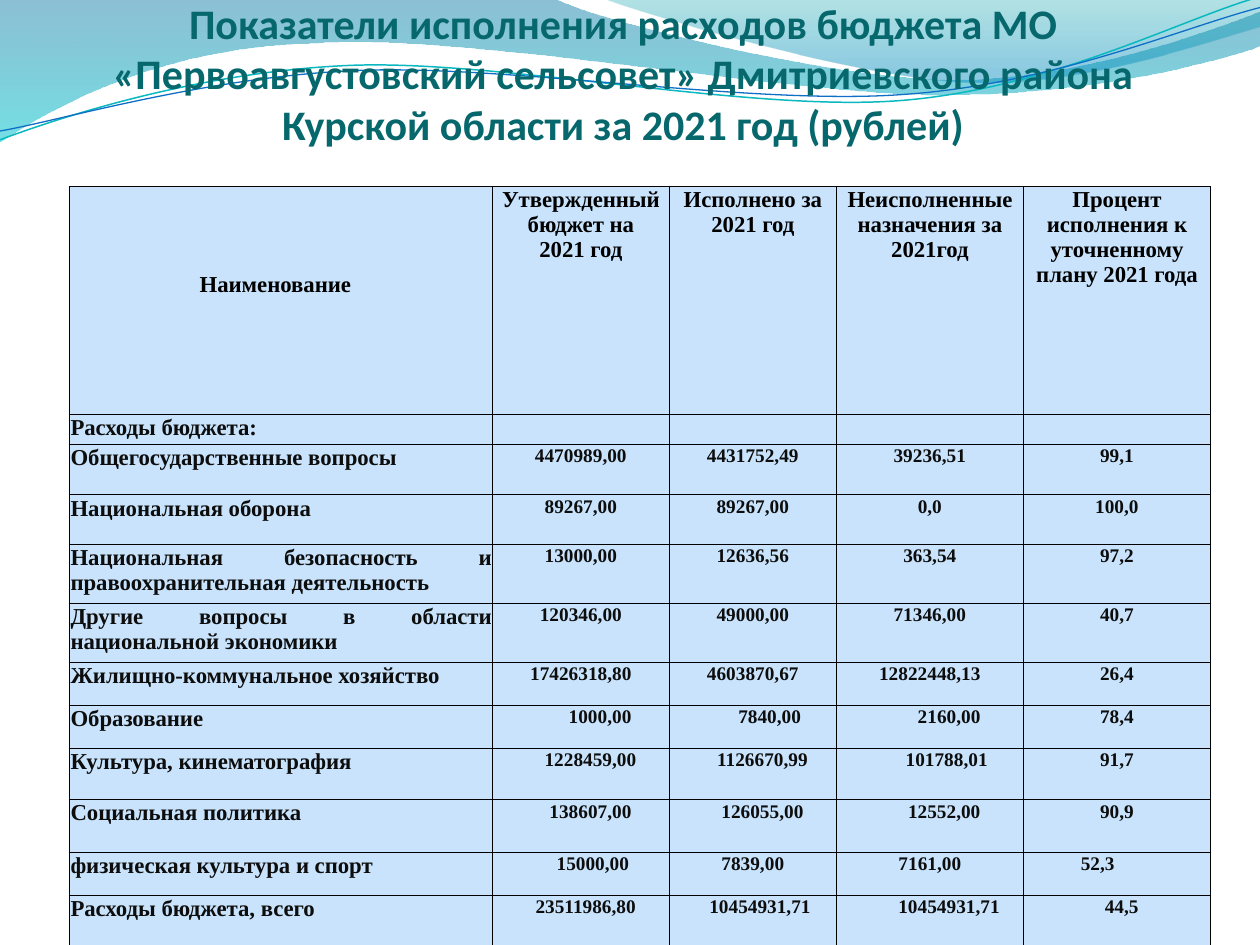
from lxml.etree import SubElement
from pptx import Presentation
from pptx.dml.color import RGBColor
from pptx.enum.text import MSO_ANCHOR, PP_ALIGN
from pptx.oxml.ns import qn
from pptx.util import Inches, Pt

TEAL = RGBColor(0x06, 0x68, 0x6C)
BLACK = RGBColor(0, 0, 0)
INK = RGBColor(0x0D, 0x0D, 0x0D)
PALE = RGBColor(0xC8, 0xE3, 0xFB)
AQUA = RGBColor(0x0A, 0xB8, 0xBF)
BLUE = RGBColor(0x0F, 0x6F, 0xC6)

TITLE = ("Показатели исполнения расходов бюджета МО «Первоавгустовский сельсовет» "
         "Дмитриевского района Курской области за 2021 год (рублей)")
NAME = "Наименование"
HEADS = ["Утвержденный бюджет на\n2021 год", "Исполнено за 2021 год",
         "Неисполненные назначения за 2021год",
         "Процент исполнения к уточненному плану 2021 года"]
# label, values, shift of each value in spaces (right is positive)
BODY = [
    ("Расходы бюджета:", ("", "", "", ""), (0, 0, 0, 0)),
    ("Общегосударственные вопросы", ("4470989,00", "4431752,49", "39236,51", "99,1"), (0, 0, 0, 0)),
    ("Национальная оборона", ("89267,00", "89267,00", "0,0", "100,0"), (0, 0, 0, 0)),
    ("Национальная безопасность и правоохранительная деятельность",
     ("13000,00", "12636,56", "363,54", "97,2"), (0, 0, 0, 0)),
    ("Другие вопросы в области национальной экономики",
     ("120346,00", "49000,00", "71346,00", "40,7"), (0, 0, 0, 0)),
    ("Жилищно-коммунальное хозяйство",
     ("17426318,80", "4603870,67", "12822448,13", "26,4"), (0, 0, 0, 0)),
    ("Образование", ("1000,00", "7840,00", "2160,00", "78,4"), (8, 7, 8, 0)),
    ("Культура, кинематография",
     ("1228459,00", "1126670,99", "101788,01", "91,7"), (4, 4, 7, 0)),
    ("Социальная политика", ("138607,00", "126055,00", "12552,00", "90,9"), (4, 4, 6, 0)),
    ("физическая культура и спорт", ("15000,00", "7839,00", "7161,00", "52,3"), (5, 0, 0, -8)),
    ("Расходы бюджета, всего",
     ("23511986,80", "10454931,71", "10454931,71", "44,5"), (2, 3, 8, 2)),
]
COLS = [3.36, 1.4, 1.33, 1.48, 1.49]
TOPS = [0.46, 0.21, 0.26, 0.45]
ROWS = TOPS + [0.24, 0.4, 0.39, 0.47, 0.47, 0.34, 0.34, 0.41, 0.42, 0.34, 0.44]

# Each step is an end point (2 numbers) or a curve (6 numbers)
WAVES = [
    ([(0, 0), (4.4, -0.01), (4.76, 0.17, 6.64, 0.63, 7.58, 0.63),
      (8.53, 0.63, 9.58, 0.26, 10, 0.09), (10.01, 0.36),
      (9.83, 0.44, 8.7, 0.76, 7.46, 0.75), (6.22, 0.75, 3.82, 0.28, 2.57, 0.34),
      (1.29, 0.36, 0.46, 0.83, -0.01, 1.13), (0, 0)],
     [(0, RGBColor(0, 0x74, 0xA1), 45), (1, RGBColor(0, 0xC6, 0xCF), 55)]),
    ([(4.79, -0.01), (5.09, 0.11, 6.82, 0.62, 7.69, 0.65),
      (8.56, 0.69, 9.61, 0.32, 10, 0.21), (10, 0), (4.79, -0.01)],
     [(0, RGBColor(0, 0xA1, 0xA9), 30), (0.8, RGBColor(0, 0x8B, 0xBF), 45)]),
]
LINES = [
    ([(0, 1.11), (0.48, 0.93, 1.58, 0.57, 2.77, 0.52), (3.95, 0.47, 5.93, 0.89, 7.13, 0.8),
      (8.33, 0.71, 9.38, 0.15, 9.98, -0.02)], AQUA, 0.85),
    ([(0, 1.04), (0.47, 0.96, 1.64, 0.61, 2.83, 0.56), (4.03, 0.51, 5.97, 0.84, 7.17, 0.75),
      (8.36, 0.67, 9.41, 0.21, 10, 0.06)], BLUE, 0.75),
]


def draw(shapes, steps, close):
    """Draw straight legs first, then join each curve's three legs into one Bézier."""
    dots = [(Inches(s[i]), Inches(s[i + 1])) for s in steps for i in range(0, len(s), 2)]
    pen = shapes.build_freeform(*dots[0])
    pen.add_line_segments(dots[1:], close=close)
    shape = pen.convert_to_shape()
    shape.shadow.inherit = False
    legs = iter(list(shape._element.iter(qn("a:lnTo"))))
    for step in steps[1:]:
        leg = next(legs)
        if len(step) == 6:
            leg.tag = qn("a:cubicBezTo")
            for _ in range(2):
                extra = next(legs)
                leg.append(extra[0])
                extra.getparent().remove(extra)
    return shape


def add_wave(shapes, steps, stops):
    shape = draw(shapes, steps, True)
    shape.line.fill.background()
    shape.fill.gradient()
    shape.fill.gradient_angle = 270
    for stop, (place, color, _) in zip(shape.fill.gradient_stops, stops):
        stop.position = place
        stop.color.rgb = color
    tints = shape._element.spPr.find(qn("a:gradFill")).iter(qn("a:srgbClr"))
    for tint, (_, _, alpha) in zip(tints, stops):
        SubElement(tint, qn("a:alpha"), val=str(alpha * 1000))


def add_line(shapes, steps, color, width):
    shape = draw(shapes, steps, False)
    shape.fill.background()
    shape.line.color.rgb = color
    shape.line.width = Pt(width)


def style(para, size, color, face, align):
    para.alignment = align
    font = para.font
    font.size, font.name, font.bold = Pt(size), face, True
    font.color.rgb = color


def add_edges(cell, sides):
    props = cell._tc.get_or_add_tcPr()
    for spot, side in enumerate("LRTB"):
        edge = SubElement(props, qn("a:ln" + side), w=str(Pt(0.5)))
        if side in sides:
            fill = SubElement(edge, qn("a:solidFill"))
            SubElement(fill, qn("a:srgbClr"), val=str(BLACK))
        else:
            SubElement(edge, qn("a:noFill"))
        props.insert(spot, edge)


def fill_cell(cell, text, size, color, align=PP_ALIGN.CENTER, shift=0, sides="LRTB"):
    cell.fill.solid()
    cell.fill.fore_color.rgb = PALE
    space = Pt(size / 4)
    cell.margin_left = Inches(0.01) + max(shift, 0) * space
    cell.margin_right = Inches(0.01) + max(-shift, 0) * space
    cell.margin_top, cell.margin_bottom = Inches(0.01), 0
    cell.text = text
    for para in cell.text_frame.paragraphs:
        style(para, size, color, "Times New Roman", align)
        if not text:
            SubElement(para._p, qn("a:endParaRPr"), sz=str(size * 100))
    add_edges(cell, sides)


def add_budget(shapes):
    frame = shapes.add_table(len(ROWS), len(COLS), Inches(0.55), Inches(1.48),
                             Inches(sum(COLS)), Inches(sum(ROWS)))
    table = frame.table
    table.first_row = table.horz_banding = False
    for col, width in zip(table.columns, COLS):
        col.width = Inches(width)
    for row, height in zip(table.rows, ROWS):
        row.height = Inches(height)

    last = len(TOPS) - 1
    for r, sides in enumerate(("LRT", "LR", "LR", "LRB")):
        text, size, shift = (NAME, 13, -2) if r == 2 else ("", 11, 0)
        fill_cell(table.cell(r, 0), text, size, BLACK, shift=shift, sides=sides)
    for c, head in enumerate(HEADS, 1):
        for r in range(len(TOPS)):
            text, size = ("", 11) if r else (head, 13)
            fill_cell(table.cell(r, c), text, size, BLACK)
        table.cell(0, c).merge(table.cell(last, c))
    for r, (label, values, shifts) in enumerate(BODY, len(TOPS)):
        fill_cell(table.cell(r, 0), label, 13, INK, PP_ALIGN.JUSTIFY)
        for c, (value, shift) in enumerate(zip(values, shifts), 1):
            fill_cell(table.cell(r, c), value, 11, INK, shift=shift)


def add_title(shapes):
    box = shapes.add_textbox(Inches(0.47), 0, Inches(8.95), Inches(1.18))
    frame = box.text_frame
    frame.word_wrap = True
    frame.vertical_anchor = MSO_ANCHOR.BOTTOM
    frame.margin_left = frame.margin_right = frame.margin_bottom = 0
    frame.text = TITLE
    style(frame.paragraphs[0], 24, TEAL, "Calibri", PP_ALIGN.CENTER)


def main():
    deck = Presentation()
    deck.slide_width, deck.slide_height = Inches(10), Inches(7.5)
    shapes = deck.slides.add_slide(deck.slide_layouts[6]).shapes
    for wave in WAVES:
        add_wave(shapes, *wave)
    for line in LINES:
        add_line(shapes, *line)
    add_title(shapes)
    add_budget(shapes)
    deck.save("out.pptx")


if __name__ == "__main__":
    main()
